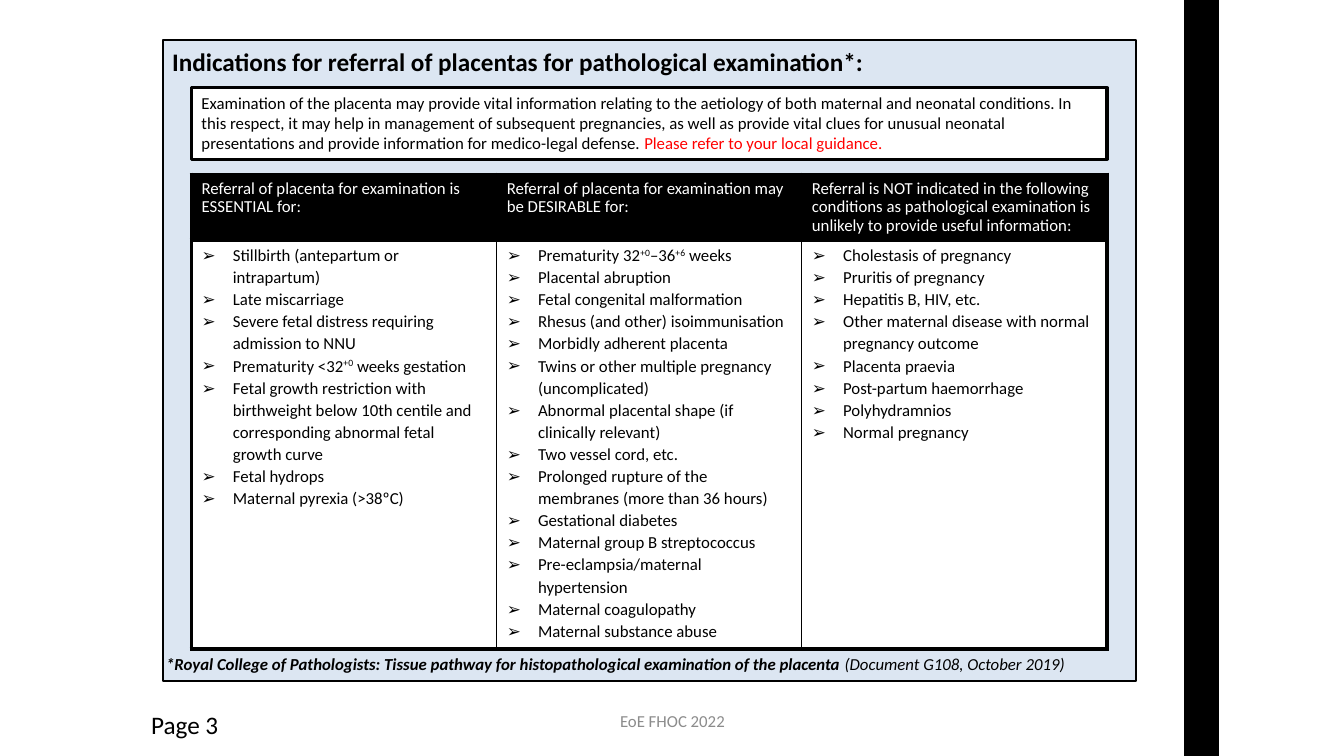
from lxml.etree import SubElement
from pptx import Presentation
from pptx.dml.color import RGBColor
from pptx.enum.shapes import MSO_CONNECTOR, MSO_SHAPE
from pptx.enum.text import MSO_ANCHOR, PP_ALIGN
from pptx.oxml.ns import qn
from pptx.util import Inches, Pt

THEME = {
    "font": "Calibri", "title": 18, "body": 12,
    "black": "000000", "white": "FFFFFF", "panel": "DCE6F2",
    "alert": "FF0000", "footer": "8C8C8C",
    "thick": 3, "thin": 1,
}
TITLE = "Indications for referral of placentas for pathological examination*:"
INTRO = (
    "Examination of the placenta may provide vital information relating to the aetiology of both "
    "maternal and neonatal conditions. In this respect, it may help in management of subsequent "
    "pregnancies, as well as provide vital clues for unusual neonatal presentations and provide "
    "information for medico-legal defense. "
)
GUIDANCE = "Please refer to your local guidance."
SOURCE = ("*Royal College of Pathologists: Tissue pathway for histopathological "
          "examination of the placenta ")
DOCUMENT = "(Document G108, October 2019)"
PAGE = "Page 3"
FOOTER = "EoE FHOC 2022"

# Text between carets is superscript.
REFERRALS = [
    ("Referral of placenta for examination is ESSENTIAL for:", [
        "Stillbirth (antepartum or intrapartum)",
        "Late miscarriage",
        "Severe fetal distress requiring admission to NNU",
        "Prematurity <32^+0^ weeks gestation",
        "Fetal growth restriction with birthweight below 10th centile and "
        "corresponding abnormal fetal growth curve",
        "Fetal hydrops",
        "Maternal pyrexia (>38ºC)",
    ]),
    ("Referral of placenta for examination may be DESIRABLE for:", [
        "Prematurity 32^+0^–36^+6^ weeks",
        "Placental abruption",
        "Fetal congenital malformation",
        "Rhesus (and other) isoimmunisation",
        "Morbidly adherent placenta",
        "Twins or other multiple pregnancy (uncomplicated)",
        "Abnormal placental shape (if clinically relevant)",
        "Two vessel cord, etc.",
        "Prolonged rupture of the membranes (more than 36 hours)",
        "Gestational diabetes",
        "Maternal group B streptococcus",
        "Pre-eclampsia/maternal hypertension",
        "Maternal coagulopathy",
        "Maternal substance abuse",
    ]),
    ("Referral is NOT indicated in the following conditions as pathological examination "
     "is unlikely to provide useful information:", [
        "Cholestasis of pregnancy",
        "Pruritis of pregnancy",
        "Hepatitis B, HIV, etc.",
        "Other maternal disease with normal pregnancy outcome",
        "Placenta praevia",
        "Post-partum haemorrhage",
        "Polyhydramnios",
        "Normal pregnancy",
    ]),
]
ROW_HEIGHTS = (0.65, 4.06)
TABLE_LEFT, TABLE_TOP, TABLE_WIDTH = 1.9, 1.73, 9.08


def color(name):
    return RGBColor.from_string(THEME[name])


def add_run(p, text, size="body", ink="black", bold=False, italic=False):
    r = p.add_run()
    r.text = text
    f = r.font
    f.name, f.size, f.bold, f.italic = THEME["font"], Pt(THEME[size]), bold, italic
    f.color.rgb = color(ink)
    return r


def add_text(s, box, wrap=False):
    tf = s.shapes.add_textbox(*map(Inches, box)).text_frame
    tf.word_wrap = wrap
    return tf


def add_panel(s, box, fill, width):
    sp = s.shapes.add_shape(MSO_SHAPE.RECTANGLE, *map(Inches, box))
    sp.shadow.inherit = False
    sp.fill.solid()
    sp.fill.fore_color.rgb = color(fill)
    sp.line.color.rgb = color("black")
    sp.line.width = Pt(width)
    return sp


def style_cell(cell, fill, column):
    last = len(REFERRALS) - 1
    widths = {
        "L": THEME["thick" if column == 0 else "thin"],
        "R": THEME["thick" if column == last else "thin"],
        "T": THEME["thick"], "B": THEME["thick"],
    }
    tcPr = cell._tc.get_or_add_tcPr()
    for side, width in widths.items():
        ln = SubElement(tcPr, qn(f"a:ln{side}"), w=str(Pt(width)))
        SubElement(SubElement(ln, qn("a:solidFill")), qn("a:srgbClr"), val=THEME["black"])
    cell.fill.solid()
    cell.fill.fore_color.rgb = color(fill)


def add_bullet(p, item):
    pPr = p._p.get_or_add_pPr()
    pPr.set("marL", str(Inches(0.31)))
    pPr.set("indent", str(-Inches(0.31)))
    SubElement(pPr, qn("a:buFont"), typeface=THEME["font"])
    SubElement(pPr, qn("a:buChar"), char="➢")
    p.line_spacing = 1.08
    for i, part in enumerate(item.split("^")):
        r = add_run(p, part)
        if i % 2:
            r._r.get_or_add_rPr().set("baseline", "30000")


def add_referral_table(s):
    count = len(REFERRALS)
    table = s.shapes.add_table(
        len(ROW_HEIGHTS), count, Inches(TABLE_LEFT), Inches(TABLE_TOP),
        Inches(TABLE_WIDTH), Inches(sum(ROW_HEIGHTS))).table
    table.first_row = table.horz_banding = False
    for row, height in zip(table.rows, ROW_HEIGHTS):
        row.height = Inches(height)
    for c, (heading, items) in enumerate(REFERRALS):
        table.columns[c].width = Inches(TABLE_WIDTH / count)
        head, body = table.cell(0, c), table.cell(1, c)
        style_cell(head, "black", c)
        style_cell(body, "white", c)
        body.margin_top, body.margin_bottom = Inches(0.04), 0
        p = head.text_frame.paragraphs[0]
        p.line_spacing = 0.9
        add_run(p, heading, ink="white")
        tf = body.text_frame
        for i, item in enumerate(items):
            add_bullet(tf.add_paragraph() if i else tf.paragraphs[0], item)


def main():
    prs = Presentation()
    prs.slide_width, prs.slide_height = Inches(13.33), Inches(7.5)
    s = prs.slides.add_slide(prs.slide_layouts[6])

    add_panel(s, (1.62, 0.4, 9.65, 6.36), "panel", 1.5)
    tf = add_text(s, (1.4, 6.99, 0.88, 0.4))
    add_run(tf.paragraphs[0], PAGE, "title")

    bar = s.shapes.add_connector(
        MSO_CONNECTOR.STRAIGHT, Inches(11.92), 0, Inches(11.92), Inches(7.5))
    bar.line.color.rgb = color("black")
    bar.line.width = Pt(25)
    SubElement(bar._element.spPr, qn("a:effectLst"))

    tf = add_text(s, (1.61, 0.41, 7.17, 0.4))
    add_run(tf.paragraphs[0], TITLE, "title", bold=True)

    add_referral_table(s)

    p = add_text(s, (1.55, 6.44, 9.2, 0.3)).paragraphs[0]
    add_run(p, SOURCE, bold=True, italic=True)
    add_run(p, DOCUMENT, italic=True)

    tf = add_panel(s, (1.9, 0.87, 9.08, 0.71), "white", 2.25).text_frame
    tf.word_wrap = True
    tf.vertical_anchor = MSO_ANCHOR.TOP
    p = tf.paragraphs[0]
    p.alignment = PP_ALIGN.LEFT
    add_run(p, INTRO)
    add_run(p, GUIDANCE, ink="alert")

    tf = add_text(s, (4.56, 6.95, 4.22, 0.4), wrap=True)
    tf.vertical_anchor = MSO_ANCHOR.MIDDLE
    p = tf.paragraphs[0]
    p.alignment = PP_ALIGN.CENTER
    add_run(p, FOOTER, ink="footer")

    prs.save("out.pptx")


if __name__ == "__main__":
    main()
